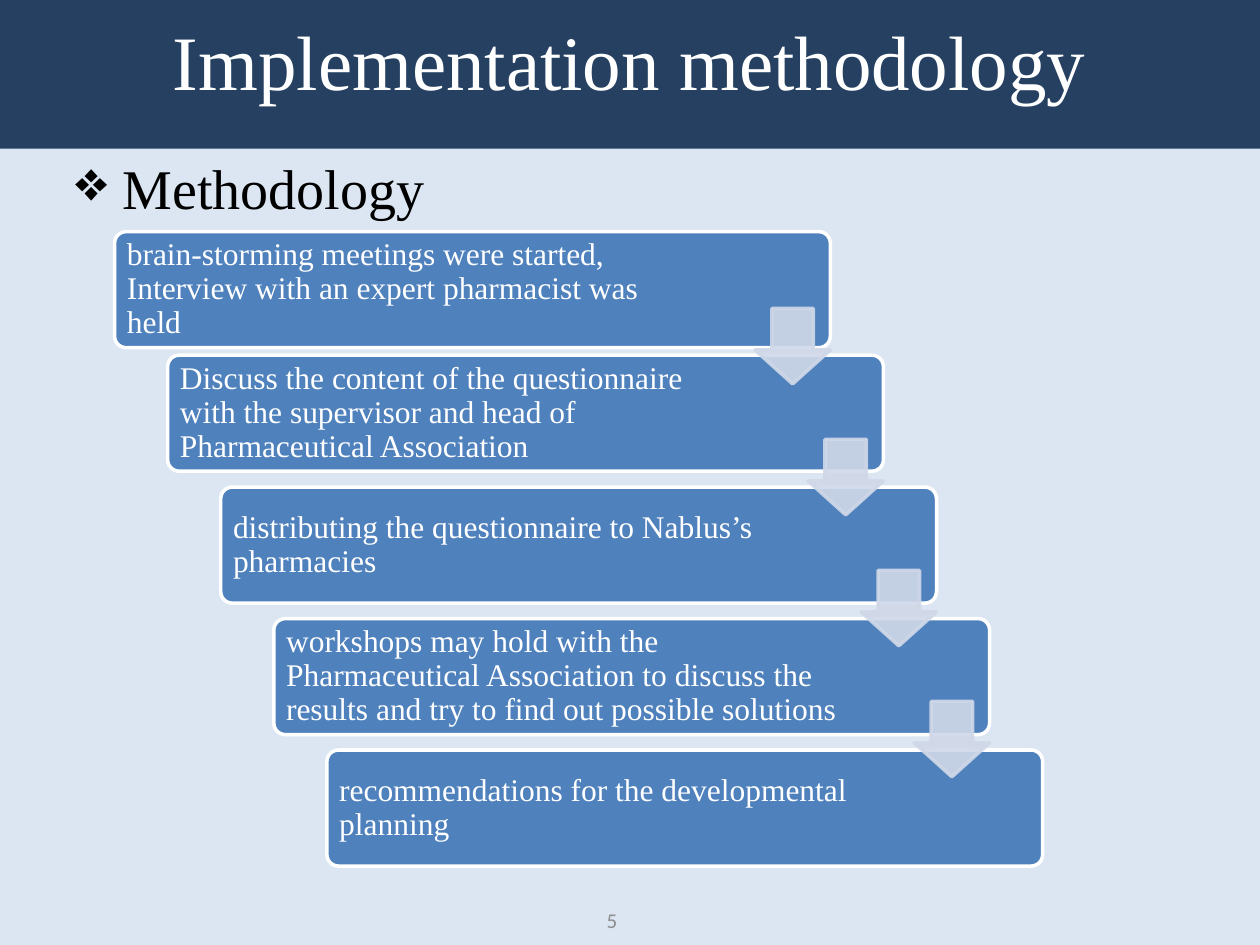
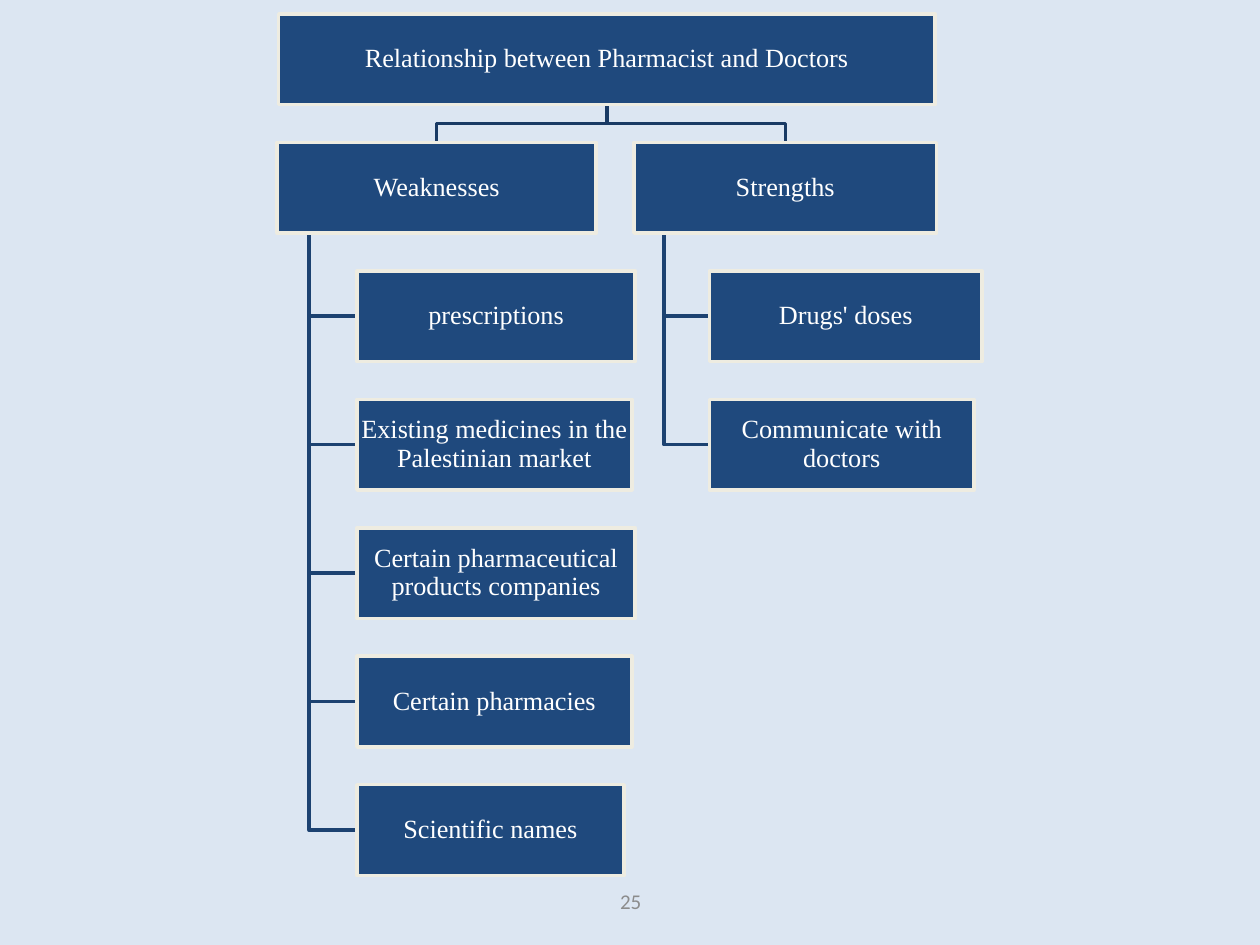
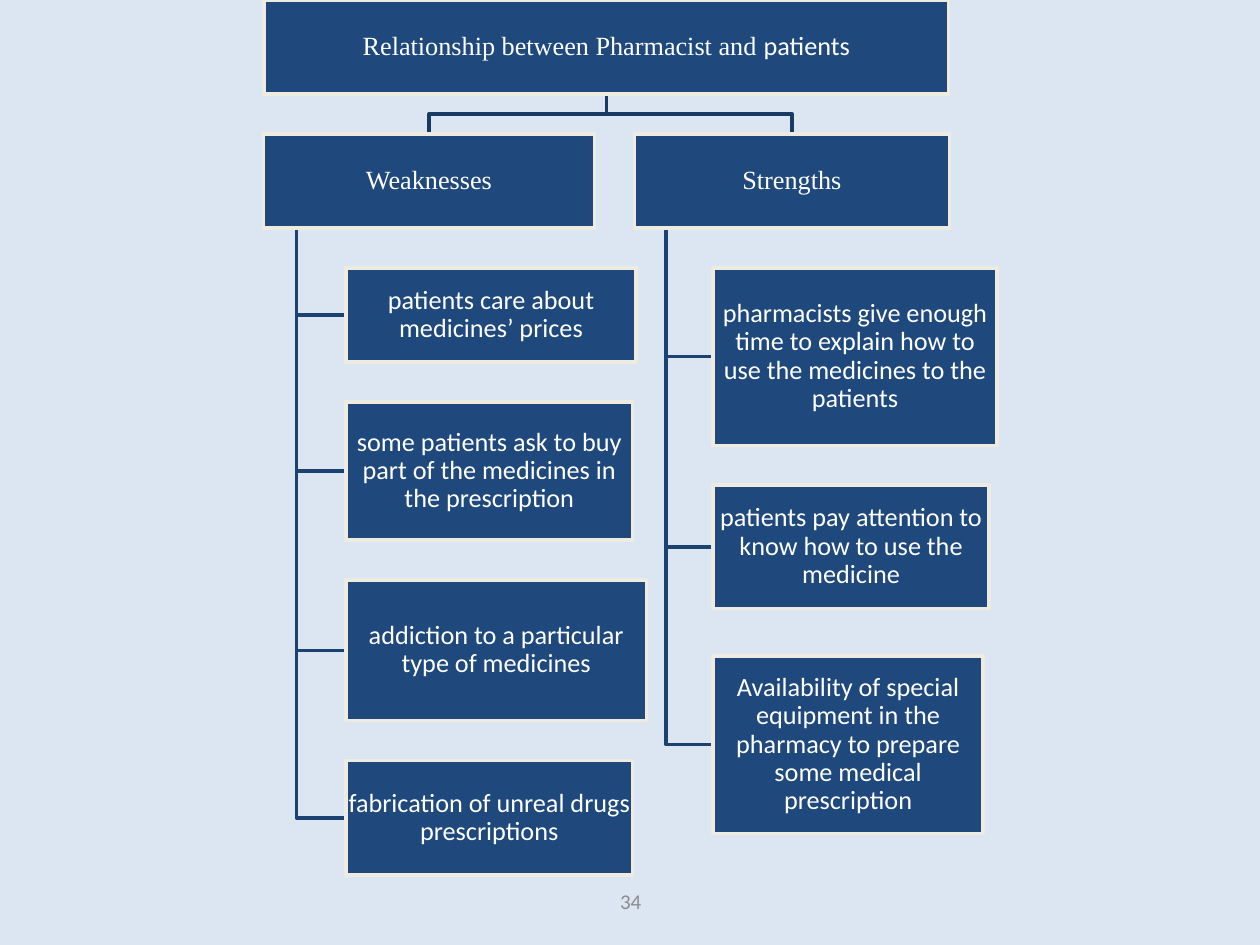
from dataclasses import dataclass

from lxml.etree import SubElement
from pptx import Presentation
from pptx.dml.color import RGBColor
from pptx.enum.shapes import MSO_SHAPE
from pptx.enum.text import MSO_ANCHOR, PP_ALIGN
from pptx.oxml.ns import qn
from pptx.util import Cm, Pt

SERIF, SANS = "Times New Roman", "Calibri"
WHITE, BLACK, GREY = "FFFFFF", "000000", "8C8C8C"
PALE, BAND, STEP, ARROW = "DCE6F2", "254061", "4F81BD", "D0D8E8"
NODE, NODE_EDGE, TRUNK, FORK = "1F497D", "EEECE1", "1C4271", "193A64"


def color(value):
    """Turn a hex string into a colour."""
    return RGBColor.from_string(value)


@dataclass
class Item:
    """A leaf of a chart, with the space added above it."""
    text: str
    width: float
    height: float
    extra: float = 0


@dataclass
class Branch:
    """A heading of a chart and its leaves."""
    text: str
    width: float
    items: list


class Slides:
    """Holds the style and the current slide; all measures are in cm."""

    def __init__(self):
        """Start an empty 4:3 deck."""
        self.deck = Presentation()
        self.deck.slide_width, self.deck.slide_height = Cm(25.4), Cm(19.05)
        self.page = None

    def add_page(self):
        """Add a blank slide with the shared background."""
        self.page = self.deck.slides.add_slide(self.deck.slide_layouts[6])
        fill = self.page.background.fill
        fill.solid()
        fill.fore_color.rgb = color(PALE)

    def fill_text(self, box, spans, size, ink=WHITE, align=PP_ALIGN.CENTER,
                  anchor=MSO_ANCHOR.MIDDLE, insets=(0.25, 0.13, 0.25, 0.13), spacing=None):
        """Fill a box with one paragraph of (text, font) runs."""
        frame = box.text_frame
        frame.word_wrap = True
        frame.vertical_anchor = anchor
        (frame.margin_left, frame.margin_top,
         frame.margin_right, frame.margin_bottom) = map(Cm, insets)
        para = frame.paragraphs[0]
        para.alignment = align
        if spacing:
            para.line_spacing = spacing
        for text, font in spans:
            span = para.add_run()
            span.text = text
            span.font.name, span.font.size = font, Pt(size)
            span.font.color.rgb = color(ink)
        return para

    def shape(self, kind, left, top, width, height, fill, line=None, adjustments=()):
        """Add a flat preset shape."""
        box = self.page.shapes.add_shape(kind, Cm(left), Cm(top), Cm(width), Cm(height))
        box.shadow.inherit = False
        box.fill.solid()
        box.fill.fore_color.rgb = color(fill)
        if line:
            box.line.color.rgb, box.line.width = color(line), Pt(2)
        else:
            box.line.fill.background()
        for index, value in enumerate(adjustments):
            box.adjustments[index] = value
        return box

    def text_box(self, left, top, width, height, spans, size, **style):
        """Add a text box and return its paragraph."""
        box = self.page.shapes.add_textbox(Cm(left), Cm(top), Cm(width), Cm(height))
        return self.fill_text(box, spans, size, **style)

    def title(self, text):
        """Add the title on its dark band."""
        band = self.shape(MSO_SHAPE.RECTANGLE, 0, -0.58, 25.4, 3.58, BAND)
        self.fill_text(band, [(text, SERIF)], 44)

    def bullet(self, text):
        """Add the bulleted body heading."""
        para = self.text_box(1.27, 2.97, 24.13, 16.08, [(text, SERIF)], 32, ink=BLACK,
                             align=PP_ALIGN.LEFT, anchor=MSO_ANCHOR.TOP)
        para.space_before = Pt(6.4)
        props = para._p.get_or_add_pPr()
        props.set("marL", str(Cm(0.95)))
        props.set("indent", str(-Cm(0.95)))
        SubElement(props, qn("a:buChar")).set("char", "❖")

    def number(self, value, left=8.69, top=17.65):
        """Add the slide number."""
        self.text_box(left, top, 8.05, 1.02, [(str(value), SANS)], 12, ink=GREY)

    def step(self, text, left, top, width):
        """Add one rounded step of a staircase."""
        box = self.shape(MSO_SHAPE.ROUNDED_RECTANGLE, left, top, width, 2.34,
                         STEP, WHITE, [0.1])
        self.fill_text(box, [(text, SERIF)], 18, align=PP_ALIGN.LEFT,
                       insets=(0.18, 0.18, 2.74, 0.18), spacing=0.9)

    def arrow(self, left, top, side):
        """Add a slightly transparent down arrow."""
        box = self.shape(MSO_SHAPE.DOWN_ARROW, left, top, side, side,
                         ARROW, ARROW, [0.55, 0.45])
        for tint in box._element.spPr.iter(qn("a:srgbClr")):
            SubElement(tint, qn("a:alpha")).set("val", "90000")

    def polyline(self, points, ink):
        """Add an open line through the points."""
        start, *rest = [(Cm(x), Cm(y)) for x, y in points]
        builder = self.page.shapes.build_freeform(*start)
        builder.add_line_segments(rest, close=False)
        line = builder.convert_to_shape()
        line.shadow.inherit = False
        line.fill.background()
        line.line.color.rgb, line.line.width = color(ink), Pt(2)

    def node(self, spans, left, top, width, height):
        """Add one box of a hierarchy chart."""
        box = self.shape(MSO_SHAPE.RECTANGLE, left, top, width, height, NODE, NODE_EDGE)
        self.fill_text(box, spans, 15, insets=(0.02,) * 4, spacing=0.9)

    def hierarchy(self, root, root_width, branches, left, top, height, gap, item_font):
        """Add a root, its headings and their hanging leaves, lines first."""
        span = sum(branch.width for branch in branches) + gap * (len(branches) - 1)
        middle, fork_top, head_top = left + span / 2, top + height, top + height + gap
        head_bottom = head_top + height
        nodes = [(root, middle - root_width / 2, top, root_width, height)]
        for branch in branches:
            nodes.append(([(branch.text, SERIF)], left, head_top, branch.width, height))
            center, bend = left + branch.width / 2, fork_top + gap / 2
            self.polyline([(middle, fork_top), (middle, bend),
                           (center, bend), (center, head_top)], FORK)
            trunk, item_left = left + branch.width * 0.1, left + branch.width * 0.25
            item_top = head_bottom + gap
            for item in branch.items:
                item_top += item.extra
                level = item_top + item.height / 2
                self.polyline([(trunk, head_bottom), (trunk, level),
                               (item_left, level)], TRUNK)
                nodes.append(([(item.text, item_font)], item_left, item_top,
                              item.width, item.height))
                item_top += item.height + gap
            left += branch.width + gap
        for node in nodes:
            self.node(*node)


def methodology(slides):
    """Build the staircase of steps."""
    slides.add_page()
    slides.title("Implementation methodology")
    slides.bullet("Methodology")
    steps = [
        (4.67, "brain-storming meetings were started, Interview with an expert "
               "pharmacist was held"),
        (7.16, "Discuss the content of the questionnaire with the supervisor and "
               "head of Pharmaceutical Association"),
        (9.82, "distributing the questionnaire to Nablus’s pharmacies"),
        (12.47, "workshops may hold with the Pharmaceutical Association to discuss "
                "the results and try to find out possible solutions"),
        (15.12, "recommendations for the developmental planning"),
    ]
    left, shift, width, side = 2.31, 1.07, 14.43, 1.52
    for index, (top, text) in enumerate(steps):
        slides.step(text, left + shift * index, top, width)
    for index in range(len(steps) - 1):
        slides.arrow(left + width - side + shift * index, 6.22 + 2.64 * index, side)
    slides.number(5, 8.31, 18.03)


def doctors(slides):
    """Build the chart about doctors."""
    slides.add_page()
    height = 1.83
    branches = [
        Branch("Weaknesses", 6.43, [
            Item("prescriptions", 5.61, height),
            Item("Existing medicines in the Palestinian market", 5.54, height),
            Item("Certain pharmaceutical products companies", 5.61, height),
            Item("Certain pharmacies", 5.54, height),
            Item("Scientific names", 5.38, height)]),
        Branch("Strengths", 6.1, [
            Item("Drugs' doses", 5.49, height),
            Item("Communicate with doctors", 5.33, height)]),
    ]
    slides.hierarchy([("Relationship between Pharmacist and Doctors", SERIF)], 13.23,
                     branches, 5.59, 0.28, height, 0.76, SERIF)
    slides.number(25)


def patients(slides):
    """Build the chart about patients."""
    slides.add_page()
    height = 1.9
    branches = [
        Branch("Weaknesses", 6.68, [
            Item("patients care about medicines’ prices", 5.84, height),
            Item("some patients ask to buy part of the medicines in the prescription",
                 5.77, 2.79),
            Item("addiction to a particular type of medicines", 6.05, 2.84),
            Item("fabrication of unreal drugs prescriptions", 5.77, 2.31)]),
        Branch("Strengths", 6.35, [
            Item("pharmacists give enough time to explain how to use the medicines "
                 "to the patients", 5.72, 3.58),
            Item("patients pay attention to know how to use the medicine", 5.56, 2.49),
            Item("Availability of special equipment in the pharmacy to prepare some "
                 "medical prescription", 5.44, 3.58, 0.15)]),
    ]
    root = [("Relationship between Pharmacist and ", SERIF), ("patients", SANS)]
    slides.hierarchy(root, 13.8, branches, 5.31, 0, height, 0.8, SANS)
    slides.number(34)


def main():
    """Build and save the deck."""
    slides = Slides()
    methodology(slides)
    doctors(slides)
    patients(slides)
    slides.deck.save("out.pptx")


if __name__ == "__main__":
    main()
